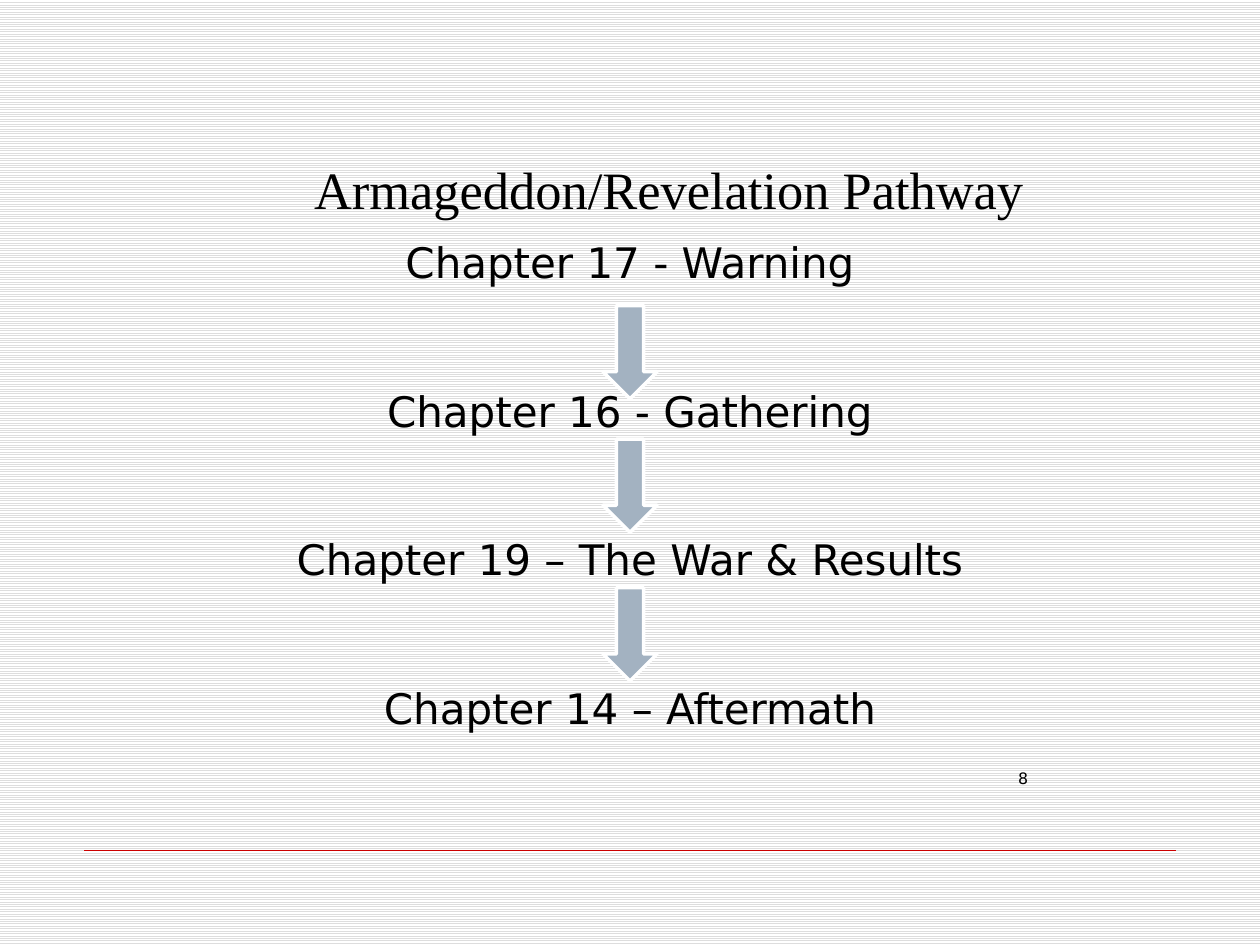
from pptx import Presentation, util as u
from pptx.dml.color import RGBColor
from pptx.enum import dml, shapes, text

HUES = {"ink": "000000", "paper": "FFFFFF", "stripe": "DDDDDD",
        "rule": "CC0000", "arrow": "A3B2C1"}
CELL = u.Inches(0.1)  # grid of 100 columns by 75 rows


def hue(name):
    return RGBColor.from_string(HUES[name])


def write(cols, lines, size, face, align, gap=0):
    """Add a text box at (left, top, width, height) in grid cells."""
    box = slide.shapes.add_textbox(*(round(c * CELL) for c in cols))
    frame = box.text_frame
    frame.word_wrap = True
    frame.text = "\n".join(lines)
    for n, para in enumerate(frame.paragraphs):
        para.alignment = align
        if n:
            para.space_before = u.Pt(gap)
        para.font.size = u.Pt(size)
        para.font.name = face
        para.font.color.rgb = hue("ink")
    return frame


deck = Presentation()
deck.slide_width, deck.slide_height = 100 * CELL, 75 * CELL
slide = deck.slides.add_slide(deck.slide_layouts[6])

back = slide.background.fill
back.patterned()
back.pattern = dml.MSO_PATTERN.LIGHT_HORIZONTAL
back.fore_color.rgb = hue("stripe")
back.back_color.rgb = hue("paper")

rule = slide.shapes.add_connector(
    shapes.MSO_CONNECTOR.STRAIGHT,
    *(round(c * CELL) for c in (6.7, 67.5, 93.3, 67.5)))
rule.line.color.rgb = hue("rule")
rule.line.width = u.Pt(1)
rule._element.spPr.append(
    rule._element.spPr.makeelement(
        "{http://schemas.openxmlformats.org/drawingml/2006/main}effectLst", {}))

page = write((66.2, 60.6, 16.2, 3.9), ["8"], 9, "DejaVu Sans", text.PP_ALIGN.RIGHT)
page.margin_left = page.margin_right = u.Inches(0.08)
page.margin_top = page.margin_bottom = u.Inches(0.04)

# The gap between chapters is two lines of text, leaving room for an arrow
steps = ["Chapter 17 - Warning", "Chapter 16 - Gathering",
         "Chapter 19 – The War & Results", "Chapter 14 – Aftermath"]
path = write((6.9, 18.3, 86.2, 41.4), steps, 24, "DejaVu Sans",
             text.PP_ALIGN.CENTER, gap=56)
title = write((10, 12, 86.2, 6.1), ["Armageddon/Revelation Pathway"], 30,
              "Times New Roman", text.PP_ALIGN.CENTER)
for frame in (path, title):
    frame.auto_size = text.MSO_AUTO_SIZE.SHAPE_TO_FIT_TEXT

for top in (25.8, 36.4, 48.2):
    arrow = slide.shapes.add_shape(
        shapes.MSO_SHAPE.RIGHT_ARROW,
        *(round(c * CELL) for c in (46.3, top, 7.4, 4.3)))
    arrow.rotation = 90
    arrow.shadow.inherit = False
    arrow.fill.solid()
    arrow.fill.fore_color.rgb = hue("arrow")
    arrow.line.color.rgb = hue("paper")
    arrow.line.width = u.Pt(2)

deck.save("out.pptx")
